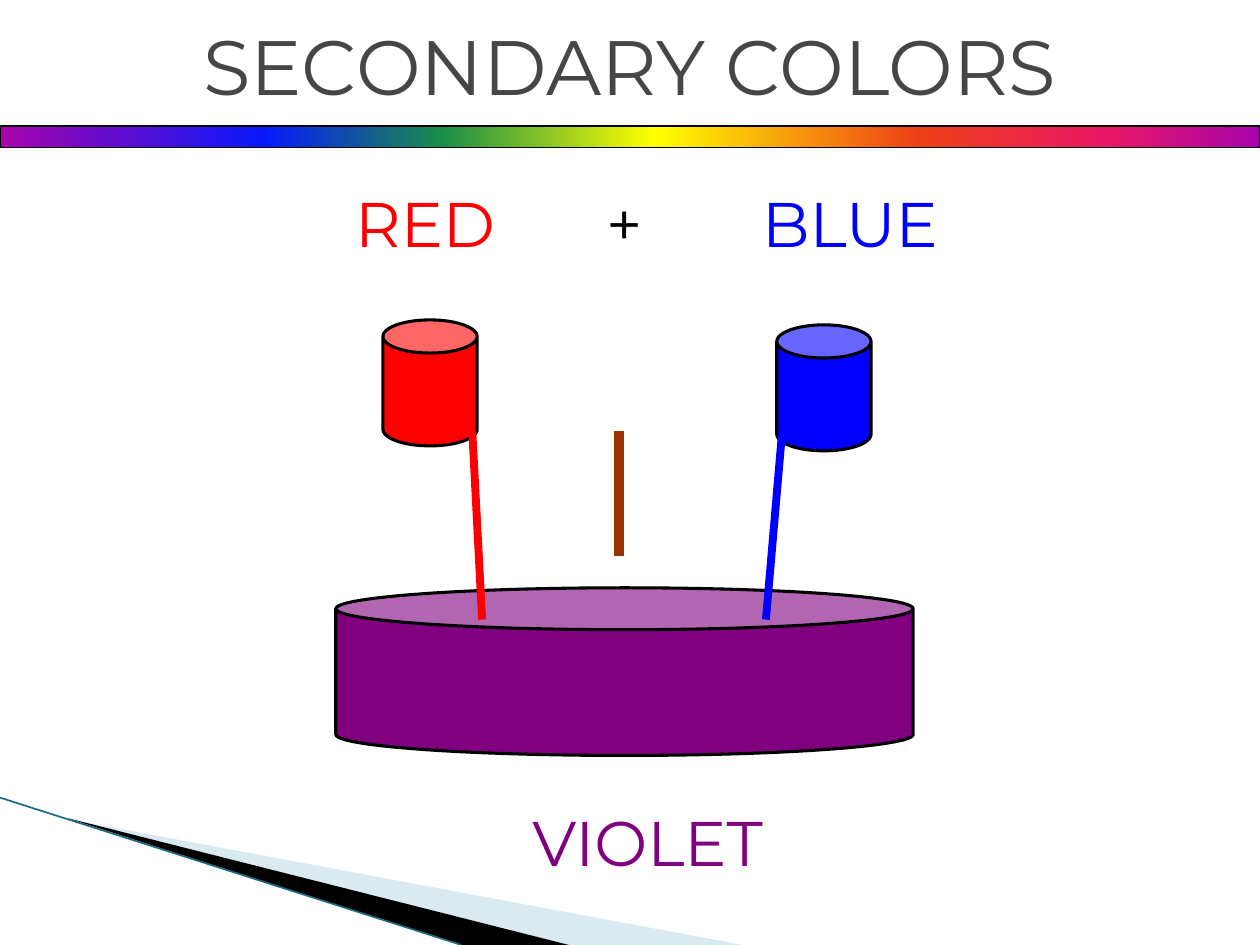
from dataclasses import dataclass

from lxml import etree
from pptx import Presentation
from pptx.dml.color import RGBColor
from pptx.enum import shapes, text
from pptx.oxml.ns import qn
from pptx.util import Cm, Pt


@dataclass(frozen=True)
class Theme:
    font: str = "Montserrat"
    title_size: int = 44
    label_size: int = 36
    title: str = "464646"
    black: str = "000000"
    red: str = "FF0000"
    blue: str = "0000FF"
    violet: str = "800080"
    wood: str = "993300"
    pale: str = "A0CBDC"
    teal: str = "1B6B80"
    spectrum: tuple = ((0, "A603AB"), (21, "0819FB"), (35, "1A8D48"), (52, "FFFF00"),
                       (73, "EE3F17"), (88, "E81766"), (100, "A603AB"))


THEME = Theme()


def set_fill(shape, color):
    shape.shadow.inherit = False
    shape.fill.solid()
    shape.fill.fore_color.rgb = RGBColor.from_string(color)


def set_line(line, color, width):
    line.color.rgb = RGBColor.from_string(color)
    line.width = Pt(width)


def add_label(slide, box, words, color, size, anchor=text.MSO_ANCHOR.TOP):
    frame = slide.shapes.add_textbox(*map(Cm, box)).text_frame
    frame.word_wrap = True
    frame.margin_left = frame.margin_right = 0
    frame.vertical_anchor = anchor
    paragraph = frame.paragraphs[0]
    paragraph.text = words
    paragraph.alignment = text.PP_ALIGN.CENTER
    paragraph.font.name = THEME.font
    paragraph.font.size = Pt(size)
    paragraph.font.color.rgb = RGBColor.from_string(color)


def add_stroke(slide, start, end, color, width):
    stroke = slide.shapes.add_connector(
        shapes.MSO_CONNECTOR.STRAIGHT, *map(Cm, (*start, *end)))
    set_line(stroke.line, color, width)
    etree.SubElement(stroke._element.spPr, qn("a:effectLst"))


def add_can(slide, box, color, lid):
    can = slide.shapes.add_shape(shapes.MSO_SHAPE.CAN, *map(Cm, box))
    can.adjustments[0] = lid
    set_fill(can, color)
    set_line(can.line, THEME.black, 1.75)


def add_wedge(slide, points, color):
    start, *others = [(Cm(x), Cm(y)) for x, y in points]
    builder = slide.shapes.build_freeform(*start)
    builder.add_line_segments(others, close=True)
    wedge = builder.convert_to_shape()
    set_fill(wedge, color)
    wedge.line.fill.background()
    return wedge


def add_corner_swoosh(slide, left, top, width, height):
    def at(x, y):
        return left + x, top + y

    pale = add_wedge(slide, [at(1.4, 0.44), at(width, height), at(11.47, height)], THEME.pale)
    pale_color = pale._element.spPr.find(qn("a:solidFill"))[0]
    etree.SubElement(pale_color, qn("a:alpha"), val="40000")
    add_wedge(slide, [at(1.35, 0.41), at(11.47, height), at(9.3, height)], THEME.black)
    add_stroke(slide, at(0, 0), at(9.3, height), THEME.teal, 0.95)


def add_mixing(slide, left, top, width, height):
    """Two paints poured into a vat, named above and below."""
    def at(x, y):
        return left + x, top + y

    add_can(slide, (*at(0.95, 2.85), 1.9, 2.54), THEME.red, 0.352)
    add_can(slide, (*at(8.89, 2.95), 1.9, 2.54), THEME.blue, 0.352)

    label_height = 1.8
    for words, x, y, label_width, color in (
            ("RED", 0, 0, 3.6, THEME.red),
            ("+", 5.28, 0, 1.07, THEME.black),
            ("BLUE", 8.46, 0, 3.81, THEME.blue),
            ("VIOLET", 3.81, height - label_height, 4.95, THEME.violet)):
        add_label(slide, (*at(x, y), label_width, label_height), words, color,
                  THEME.label_size)

    add_can(slide, (*at(0, 8.25), width, 3.38), THEME.violet, 0.25)
    add_stroke(slide, at(5.71, 5.08), at(5.71, 7.61), THEME.wood, 6)
    add_stroke(slide, at(2.75, 5.08), at(2.95, 8.89), THEME.red, 4.5)
    add_stroke(slide, at(8.99, 5.18), at(8.67, 8.89), THEME.blue, 4.5)


def add_header(slide, left, top, width, height):
    """Title above a rainbow bar that spans the box."""
    margin, bar_height = 1.27, 0.43
    add_label(slide, (left + margin, top, width - 2 * margin, 2.62), "SECONDARY COLORS",
              THEME.title, THEME.title_size, text.MSO_ANCHOR.MIDDLE)
    bar = slide.shapes.add_shape(
        shapes.MSO_SHAPE.RECTANGLE,
        *map(Cm, (left, top + height - bar_height, width, bar_height)))
    bar.shadow.inherit = False
    set_line(bar.line, THEME.black, 0.75)
    bar.fill.gradient()
    bar.fill.gradient_angle = 0
    stops = bar._element.spPr.find(qn("a:gradFill")).find(qn("a:gsLst"))
    for stop in list(stops):
        stops.remove(stop)
    for percent, color in THEME.spectrum:
        stop = etree.SubElement(stops, qn("a:gs"), pos=str(percent * 1000))
        etree.SubElement(stop, qn("a:srgbClr"), val=color)


def main():
    deck = Presentation()
    deck.slide_width, deck.slide_height = Cm(25.4), Cm(19.05)
    slide = deck.slides.add_slide(deck.slide_layouts[6])
    add_corner_swoosh(slide, 0, 16.08, 14.97, 2.97)
    add_mixing(slide, 6.77, 3.6, 11.64, 14.28)
    add_header(slide, 0, 0, 25.4, 2.97)
    deck.save("out.pptx")


if __name__ == "__main__":
    main()
